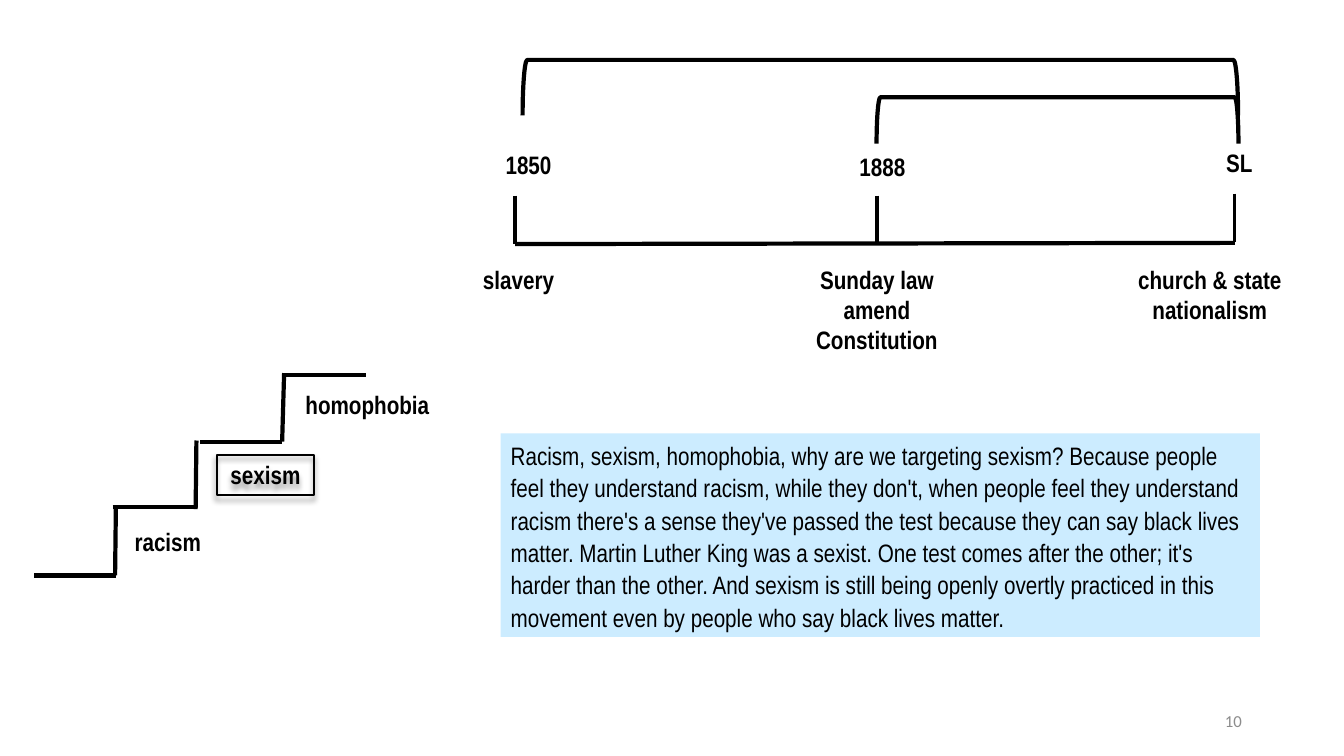
from dataclasses import dataclass

from lxml.etree import SubElement
from pptx import Presentation
from pptx.dml.color import RGBColor
from pptx.enum.shapes import MSO_CONNECTOR, MSO_SHAPE
from pptx.enum.text import MSO_ANCHOR, PP_ALIGN
from pptx.oxml.ns import qn
from pptx.util import Cm, Pt


@dataclass(frozen=True)
class Theme:
    ink: RGBColor = RGBColor(0, 0, 0)
    note: RGBColor = RGBColor(0xCC, 0xEC, 0xFF)
    muted: RGBColor = RGBColor(0x8C, 0x8C, 0x8C)
    font: str = "Arial Narrow"
    number_font: str = "Calibri"
    body: float = 18
    small: float = 12
    thick: float = 3
    tick: float = 2.25
    outline: float = 1.5


@dataclass(frozen=True)
class Event:
    x: float
    tick_top: float
    date: str
    date_x: float
    date_top: float
    caption: str
    caption_x: float
    caption_width: float


@dataclass(frozen=True)
class Step:
    """A tread, and the riser that climbs from it when there is one."""
    left: float
    y: float
    riser: tuple[float, float, float, float] | None = None


@dataclass(frozen=True)
class Label:
    text: str
    left: float
    top: float
    width: float


THEME = Theme()
LINE_HEIGHT = 1.02
TREAD = 2.06
TICK = 1.22
CAPTION_TOP = 6.53

EVENTS = [
    Event(12.98, 4.93, "1850", 13.32, 3.63, "slavery", 13.07, 2.46),
    Event(22.1, 4.93, "1888", 22.24, 3.68,
          "Sunday law\namend Constitution", 22.1, 4.17),
    Event(31.12, 4.88, "SL", 31.23, 3.58,
          "church & state\nnationalism", 30.49, 5.41),
]
STEPS = [
    Step(0.86, 14.5, (2.9, 14.5, 2.92, 12.78)),
    Step(2.84, 12.78, (4.93, 12.83, 4.95, 11.1)),
    Step(5.05, 11.13, (7.11, 11.13, 7.16, 9.4)),
    Step(7.16, 9.45),
]
STEP_LABELS = [
    Label("racism", 3, 13.13, 2.46),
    Label("homophobia", 7.37, 9.68, 3.78),
]
NOTE = (
    "Racism, sexism, homophobia, why are we targeting sexism? Because people "
    "feel they understand racism, while they don't, when people feel they "
    "understand racism there's a sense they've passed the test because they "
    "can say black lives matter. Martin Luther King was a sexist. One test "
    "comes after the other; it's harder than the other. And sexism is still "
    "being openly overtly practiced in this movement even by people who say "
    "black lives matter."
)


def write(sp, text: str, *, size: float = THEME.body, font: str = THEME.font,
          color: RGBColor = THEME.ink, bold: bool = True,
          align: PP_ALIGN = PP_ALIGN.CENTER,
          anchor: MSO_ANCHOR = MSO_ANCHOR.TOP, spacing: float = 1) -> None:
    tf = sp.text_frame
    tf.word_wrap = True
    tf.vertical_anchor = anchor
    for i, line in enumerate(text.split("\n")):
        p = tf.add_paragraph() if i else tf.paragraphs[0]
        p.alignment = align
        p.line_spacing = spacing
        r = p.add_run()
        r.text = line
        r.font.name, r.font.size, r.font.bold = font, Pt(size), bold
        r.font.color.rgb = color


def add_text(slide, text: str, left: float, top: float, width: float,
             height: float = LINE_HEIGHT, **fmt) -> None:
    sp = slide.shapes.add_textbox(Cm(left), Cm(top), Cm(width), Cm(height))
    write(sp, text, **fmt)


def add_box(slide, kind: MSO_SHAPE, left: float, top: float, width: float,
            height: float, fill: RGBColor | None = None, line: float = 0):
    sp = slide.shapes.add_shape(kind, Cm(left), Cm(top), Cm(width), Cm(height))
    sp.shadow.inherit = False
    if fill is None:
        sp.fill.background()
    else:
        sp.fill.solid()
        sp.fill.fore_color.rgb = fill
    if line:
        sp.line.color.rgb = THEME.ink
        sp.line.width = Pt(line)
    else:
        sp.line.fill.background()
    return sp


def add_line(slide, x1: float, y1: float, x2: float, y2: float,
             width: float = THEME.thick) -> None:
    cn = slide.shapes.add_connector(
        MSO_CONNECTOR.STRAIGHT, Cm(x1), Cm(y1), Cm(x2), Cm(y2))
    cn.line.color.rgb = THEME.ink
    cn.line.width = Pt(width)
    SubElement(cn._element.spPr, qn("a:effectLst"))


def add_span(slide, left: float, top: float, span: float, depth: float) -> None:
    """Draw a bracket open downwards; the frame given is the one seen after rotation."""
    sp = add_box(slide, MSO_SHAPE.LEFT_BRACKET, left + (span - depth) / 2,
                 top + (depth - span) / 2, depth, span, line=THEME.thick)
    sp.rotation = 90


def add_drop_shadow(sp) -> None:
    effects = sp._element.spPr.find(qn("a:effectLst"))
    shadow = SubElement(effects, qn("a:outerShdw"), blurRad=str(Pt(4)),
                        dist=str(Pt(3)), dir="5400000", rotWithShape="0")
    clr = SubElement(shadow, qn("a:srgbClr"), val=str(THEME.ink))
    SubElement(clr, qn("a:alpha"), val="40000")


def add_timeline(slide) -> None:
    add_line(slide, EVENTS[0].x, 6.15, EVENTS[-1].x, 6.12)
    for e in EVENTS:
        add_line(slide, e.x, e.tick_top, e.x, e.tick_top + TICK, THEME.tick)
        add_text(slide, e.date, e.date_x - 1.23, e.date_top, 2.46)
        add_text(slide, e.caption, e.caption_x - e.caption_width / 2,
                 CAPTION_TOP, e.caption_width)
    add_span(slide, 13.17, 1.51, 18.03, 1.4)
    add_span(slide, 22.09, 2.45, 9.12, 1.17)


def add_stairs(slide) -> None:
    for step in STEPS:
        add_line(slide, step.left, step.y, step.left + TREAD, step.y)
        if step.riser:
            add_line(slide, *step.riser)
    for label in STEP_LABELS:
        add_text(slide, label.text, label.left, label.top, label.width)
    sexism = add_box(slide, MSO_SHAPE.RECTANGLE, 5.46, 11.46, 2.46,
                     LINE_HEIGHT, line=THEME.outline)
    add_drop_shadow(sexism)
    write(sexism, "sexism")


def main() -> None:
    prs = Presentation()
    prs.slide_width, prs.slide_height = Cm(33.87), Cm(19.05)
    slide = prs.slides.add_slide(prs.slide_layouts[6])
    add_timeline(slide)
    add_stairs(slide)
    note = add_box(slide, MSO_SHAPE.RECTANGLE, 12.62, 10.92, 19.13, 5.13,
                   fill=THEME.note)
    write(note, NOTE, bold=False, align=PP_ALIGN.LEFT, spacing=1.07)
    add_text(slide, "10", 23.93, 17.65, 7.62, size=THEME.small,
             font=THEME.number_font, color=THEME.muted, bold=False,
             align=PP_ALIGN.RIGHT, anchor=MSO_ANCHOR.MIDDLE)
    prs.save("out.pptx")


if __name__ == "__main__":
    main()
